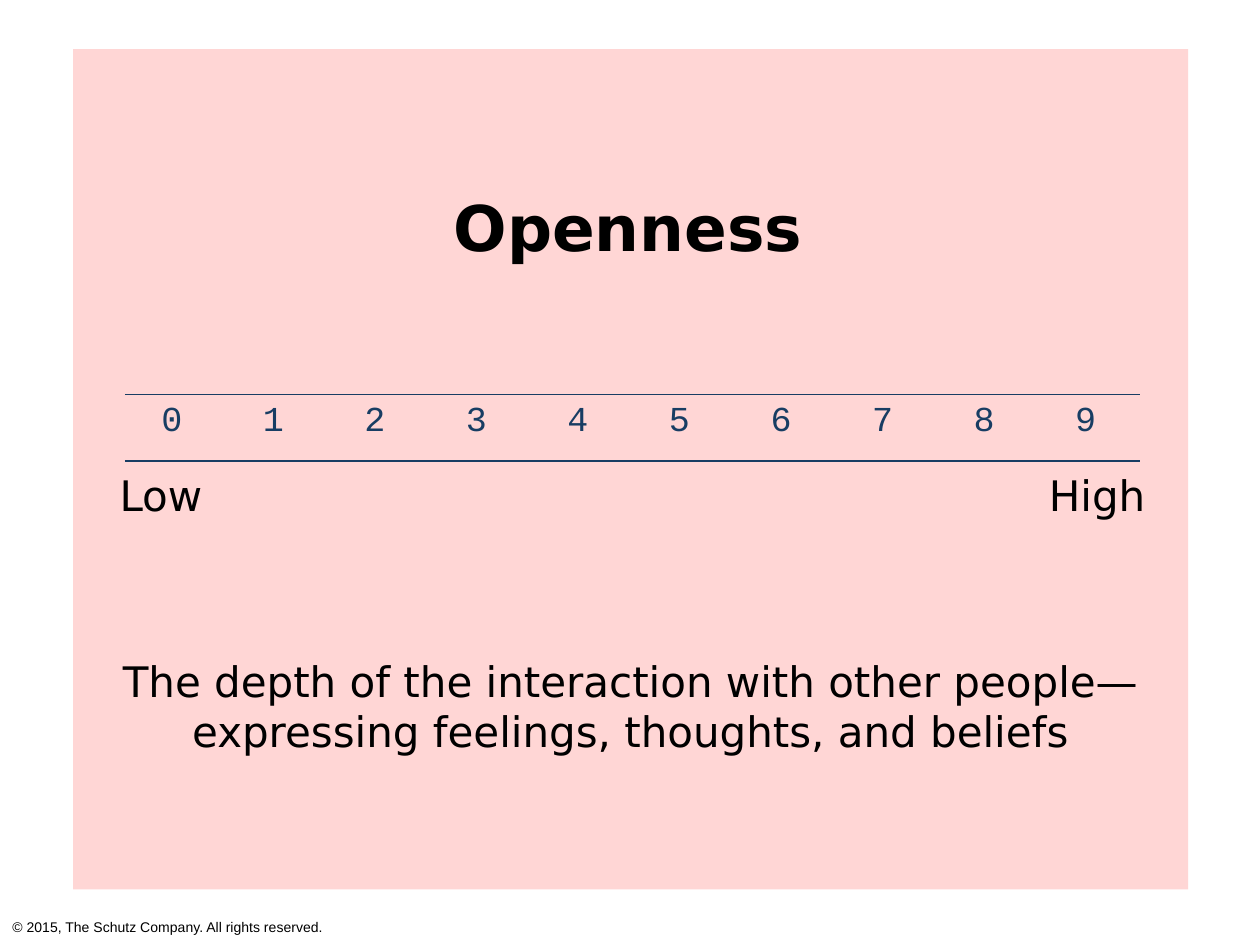
from dataclasses import dataclass
from lxml.etree import SubElement
from pptx import Presentation
from pptx.dml.color import RGBColor as Rgb
from pptx.enum.shapes import MSO_SHAPE as Kind
from pptx.enum.text import MSO_ANCHOR as Anchor, PP_ALIGN as Align
from pptx.oxml.ns import qn
from pptx.slide import Slide
from pptx.table import _Cell as Cell
from pptx.text.text import TextFrame as Frame
from pptx.util import Inches, Pt


@dataclass(frozen=True)
class Theme:
    pink: str = "FFD6D5"
    navy: str = "183D63"
    black: str = "000000"
    sans: str = "DejaVu Sans"
    mono: str = "Courier New"
    plain: str = "Arial"
    title: int = 36
    body: int = 24
    digit: int = 20
    note: int = 8
    rule: int = 1
    pad: float = 0.06


@dataclass(frozen=True)
class Label:
    text: str
    left: float
    top: float
    width: float
    height: float
    size: int
    font: str
    align: Align = Align.LEFT
    bold: bool = False
    inset: float = 0.1


THEME = Theme()
LABELS = (
    Label("© 2015, The Schutz Company. All rights reserved.", 0, 7.23, 10, 0.24, THEME.note, THEME.plain),
    Label("Openness", 2.14, 1.44, 5.65, 0.72, THEME.title, THEME.sans, Align.CENTER, True),
    Label("Low", 0.85, 3.67, 1.29, 0.51, THEME.body, THEME.sans),
    Label("High", 7.86, 3.67, 1.29, 0.51, THEME.body, THEME.sans, Align.RIGHT),
    Label("The depth of the interaction with other people—expressing feelings, thoughts, and beliefs",
          0.58, 5.14, 8.85, 0.92, THEME.body, THEME.sans, Align.CENTER, inset=THEME.pad),
)


def write(frame: Frame, text: str, size: int, face: str, color: str,
          align: Align = Align.LEFT, bold: bool = False) -> None:
    frame.text = text
    line = frame.paragraphs[0]
    line.alignment = align
    font = line.runs[0].font
    font.size, font.name, font.bold = Pt(size), face, bold
    font.color.rgb = Rgb.from_string(color)


def pad(box: Frame | Cell, left: float) -> None:
    box.margin_left = Inches(left)
    box.margin_right = box.margin_top = box.margin_bottom = Inches(THEME.pad)
    box.vertical_anchor = Anchor.TOP


def draw_label(slide: Slide, label: Label) -> None:
    box = slide.shapes.add_textbox(Inches(label.left), Inches(label.top),
                                   Inches(label.width), Inches(label.height))
    frame = box.text_frame
    frame.word_wrap = True
    pad(frame, label.inset)
    write(frame, label.text, label.size, label.font, THEME.black, label.align, label.bold)


def draw_panel(slide: Slide) -> None:
    panel = slide.shapes.add_shape(Kind.RECTANGLE, Inches(0.58), Inches(0.39), Inches(8.85), Inches(6.67))
    panel.shadow.inherit = False
    panel.fill.solid()
    panel.fill.fore_color.rgb = Rgb.from_string(THEME.pink)
    panel.line.fill.background()


def rule_cell(cell: Cell) -> None:
    props = cell._tc.get_or_add_tcPr()
    for side in "LRTB":
        edge = SubElement(props, qn(f"a:ln{side}"), w=str(Pt(THEME.rule)))
        if side in "TB":
            fill = SubElement(edge, qn("a:solidFill"))
            SubElement(fill, qn("a:srgbClr"), val=THEME.navy)
        else:
            SubElement(edge, qn("a:noFill"))
    cell.fill.background()


def draw_scale(slide: Slide, count: int = 10) -> None:
    table = slide.shapes.add_table(1, count, Inches(0.99), Inches(3.13), Inches(8.06), Inches(0.53)).table
    table.first_row = table.horz_banding = False
    for digit in range(count):
        cell = table.cell(0, digit)
        pad(cell, 0.29)
        rule_cell(cell)
        write(cell.text_frame, str(digit), THEME.digit, THEME.mono, THEME.navy)


def main() -> None:
    """Build the Openness scale slide."""
    deck = Presentation()
    deck.slide_width, deck.slide_height = Inches(10), Inches(7.5)
    slide = deck.slides.add_slide(deck.slide_layouts[6])
    draw_panel(slide)
    draw_scale(slide)
    for label in LABELS:
        draw_label(slide, label)
    deck.save("out.pptx")


if __name__ == "__main__":
    main()
